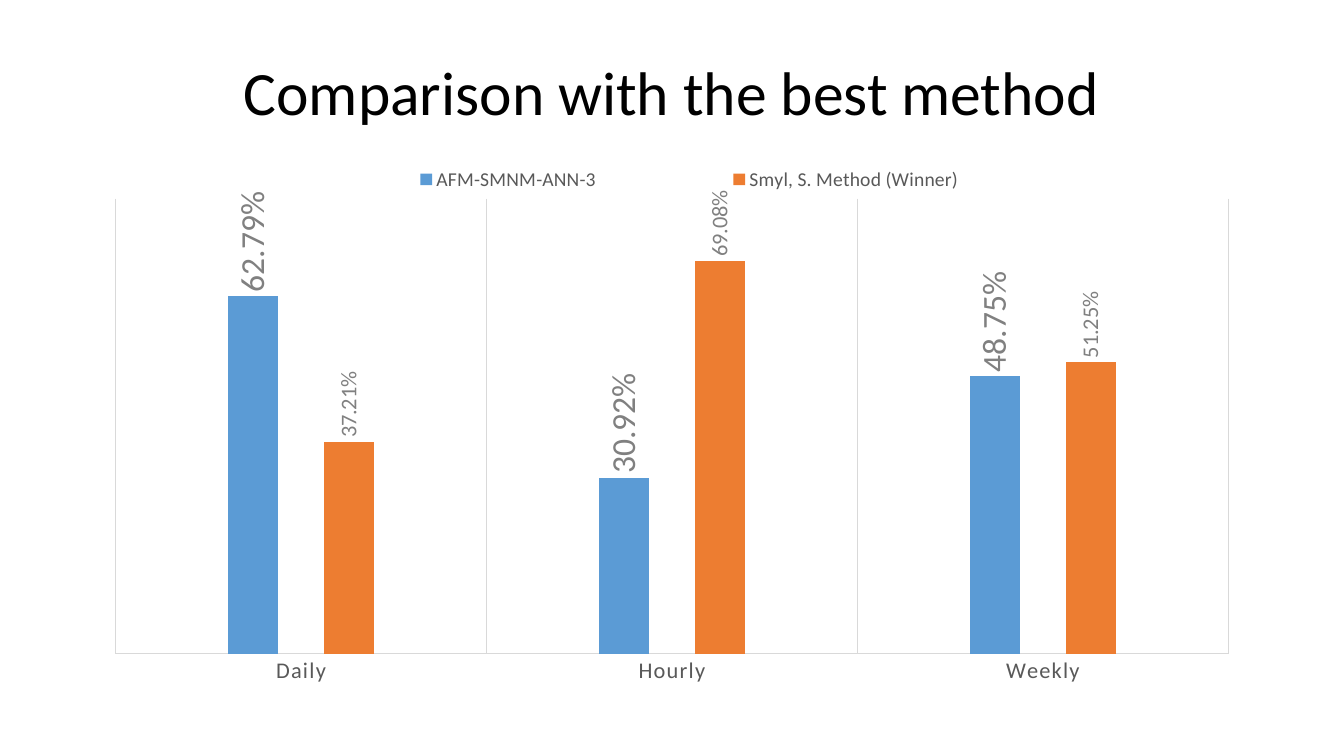
from lxml import etree
from pptx import Presentation
from pptx.chart.data import CategoryChartData
from pptx.dml.color import RGBColor
from pptx.enum.chart import (XL_CHART_TYPE, XL_LABEL_POSITION,
                             XL_LEGEND_POSITION, XL_TICK_MARK)
from pptx.enum.text import MSO_ANCHOR, PP_ALIGN
from pptx.oxml.ns import qn
from pptx.util import Cm, Pt

COLUMNS = XL_CHART_TYPE.COLUMN_CLUSTERED
OUTSIDE_END = XL_LABEL_POSITION.OUTSIDE_END
LEGEND_TOP = XL_LEGEND_POSITION.TOP
NO_TICK = XL_TICK_MARK.NONE
MIDDLE = MSO_ANCHOR.MIDDLE
CENTER = PP_ALIGN.CENTER

BLACK = RGBColor(0x00, 0x00, 0x00)
DARK_GRAY = RGBColor(0x59, 0x59, 0x59)
LABEL_GRAY = RGBColor(0x80, 0x80, 0x80)
LINE_GRAY = RGBColor(0xD9, 0xD9, 0xD9)
BLUE = RGBColor(0x5B, 0x9B, 0xD5)
ORANGE = RGBColor(0xED, 0x7D, 0x31)

FONT = "Calibri"
PERCENT = "0.00%"
PERIODS = ["Daily", "Hourly", "Weekly"]
# name, shares, bar colour, label size
METHODS = [
    ("AFM-SMNM-ANN-3", [0.6279, 0.3092, 0.4875], BLUE, 24),
    ("Smyl, S. Method (Winner)", [0.3721, 0.6908, 0.5125], ORANGE, 16),
]


def style_font(font, size, color):
    font.name = FONT
    font.size = Pt(size)
    font.color.rgb = color


def style_line(line):
    line.color.rgb = LINE_GRAY
    line.width = Pt(0.75)


def place_in_chart(part, x, y, w, h, inner=False):
    """Fix a chart part's layout, in fractions of the chart's size."""
    layout = part.find(qn("c:layout"))
    if layout is None:
        layout = etree.Element(qn("c:layout"))
        is_legend = part.tag == qn("c:legend")
        if is_legend:
            part.find(qn("c:legendPos")).addnext(layout)
        else:
            part.insert(0, layout)
    manual = etree.SubElement(layout, qn("c:manualLayout"))
    settings = [("layoutTarget", "inner")] if inner else []
    settings += [("xMode", "edge"), ("yMode", "edge"),
                 ("x", x), ("y", y), ("w", w), ("h", h)]
    for name, value in settings:
        etree.SubElement(manual, qn(f"c:{name}")).set("val", str(value))


def add_title(slide, left, top, width, height):
    title = slide.shapes.add_textbox(left, top, width, height).text_frame
    title.word_wrap = True
    title.vertical_anchor = MIDDLE
    heading = title.paragraphs[0]
    heading.text = "Comparison with the best method"
    heading.alignment = CENTER
    heading.line_spacing = 0.9
    style_font(heading.font, 44, BLACK)


def style_axes(chart):
    periods = chart.category_axis
    periods.major_tick_mark = NO_TICK
    periods.minor_tick_mark = NO_TICK
    periods.has_major_gridlines = True
    style_line(periods.major_gridlines.format.line)
    style_line(periods.format.line)
    style_font(periods.tick_labels.font, 16, DARK_GRAY)
    periods._element.find(".//" + qn("a:defRPr")).set("spc", "100")

    shares = chart.value_axis
    shares.minimum_scale = 0
    shares.maximum_scale = 0.8
    shares.has_major_gridlines = False
    shares.tick_labels.number_format = PERCENT
    shares.tick_labels.number_format_is_linked = False
    shares.visible = False


def style_series(series, color, label_size):
    series.format.fill.solid()
    series.format.fill.fore_color.rgb = color
    series.invert_if_negative = False
    labels = series.data_labels
    labels.show_value = True
    labels.position = OUTSIDE_END
    labels.number_format = PERCENT
    labels.number_format_is_linked = False
    style_font(labels.font, label_size, LABEL_GRAY)
    body = labels._element.find(".//" + qn("a:bodyPr"))
    body.set("rot", "-5400000")
    body.set("vert", "horz")


def add_comparison_chart(slide, left, top, width, height):
    data = CategoryChartData(number_format=PERCENT)
    data.categories = PERIODS
    for name, shares, _, _ in METHODS:
        data.add_series(name, shares)
    chart = slide.shapes.add_chart(COLUMNS, left, top, width, height, data).chart
    chart.has_title = False
    style_font(chart.font, 10, BLACK)

    plot = chart.plots[0]
    plot.gap_width = 444
    plot.overlap = -90
    plot.vary_by_categories = False
    for series, (_, _, color, label_size) in zip(plot.series, METHODS):
        style_series(series, color, label_size)
    style_axes(chart)

    chart.has_legend = True
    legend = chart.legend
    legend.position = LEGEND_TOP
    legend.include_in_layout = False
    style_font(legend.font, 14, DARK_GRAY)
    place_in_chart(legend._element, 0.17, 0.02, 0.69, 0.07)
    plot_area = chart._chartSpace.chart.plotArea
    place_in_chart(plot_area, 0.02, 0.09, 0.96, 0.83, inner=True)


def main():
    deck = Presentation()
    deck.slide_width = Cm(33.87)
    deck.slide_height = Cm(19.05)
    slide = deck.slides.add_slide(deck.slide_layouts[6])
    margin = Cm(2.33)
    content_width = deck.slide_width - 2 * margin
    add_title(slide, margin, Cm(0.58), content_width, Cm(3.68))
    add_comparison_chart(slide, margin, Cm(3.76), content_width, Cm(13.82))
    deck.save("out.pptx")


if __name__ == "__main__":
    main()
